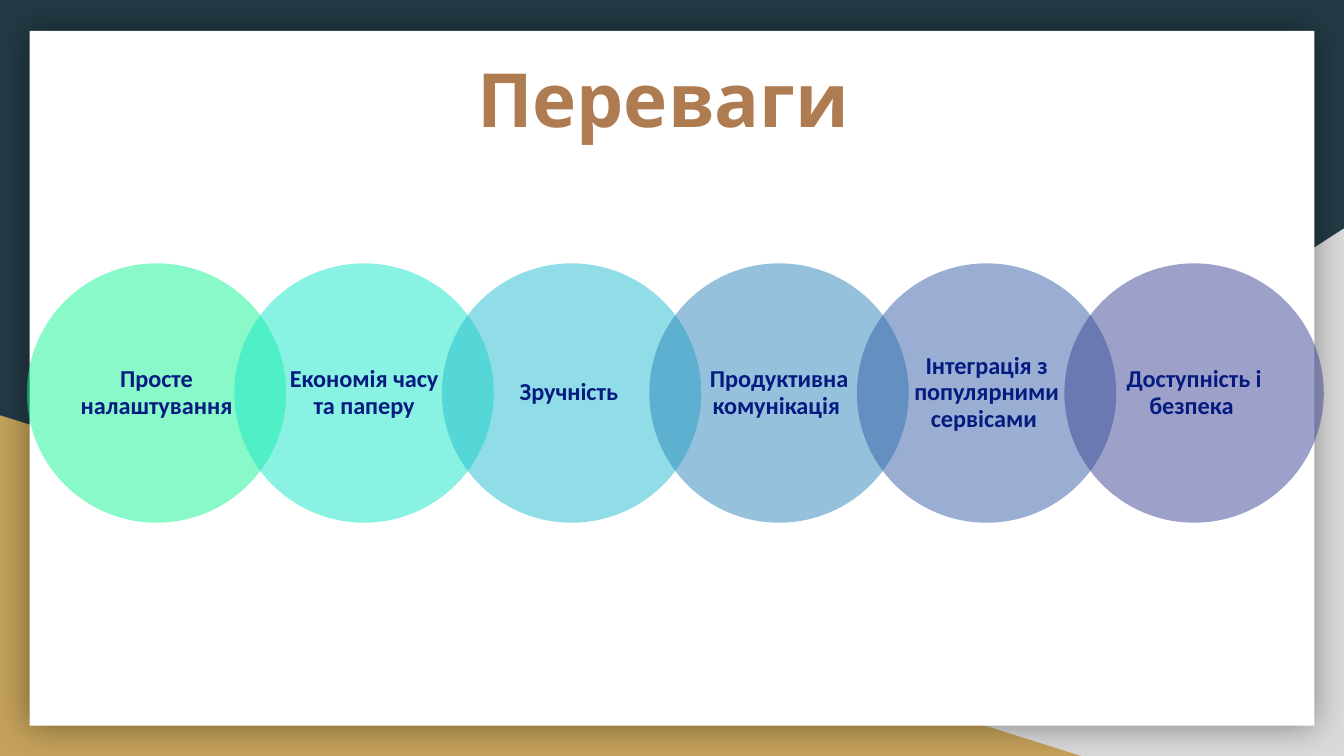
from lxml import etree
from pptx import Presentation
from pptx.dml.color import RGBColor
from pptx.enum.shapes import MSO_SHAPE
from pptx.enum.text import MSO_ANCHOR, PP_ALIGN
from pptx.oxml import parse_xml
from pptx.oxml.ns import nsdecls, qn
from pptx.util import Inches, Pt

RECT, OVAL, WEDGE = MSO_SHAPE.RECTANGLE, MSO_SHAPE.OVAL, MSO_SHAPE.RIGHT_TRIANGLE
TOP, MIDDLE = MSO_ANCHOR.TOP, MSO_ANCHOR.MIDDLE
CENTER = PP_ALIGN.CENTER

THEME = {
    "back": "233A44", "grey": "D9D9D9", "gold": "C4A15A", "card": "FFFFFF",
    "title": {"name": "League Spartan", "size": Pt(40), "bold": True, "color": "AF7B51"},
    "label": {"name": "Calibri", "size": Pt(13), "bold": True, "color": "051B80"},
}
ITEMS = [
    ("Просте налаштування ", "14F597"),
    ("Економія часу та паперу", "17E7C7"),
    ("Зручність ", "22BDD0"),
    ("Продуктивна комунікація ", "2C85BB"),
    ("Інтеграція з популярними сервісами ", "355EA7"),
    ("Доступність і безпека ", "3D4594"),
]


def add_plain(kind, box, color):
    """Add a filled shape with no line and no shadow."""
    shape = slide.shapes.add_shape(kind, *map(Inches, box))
    shape.shadow.inherit = False
    shape.fill.solid()
    shape.fill.fore_color.rgb = RGBColor.from_string(color)
    shape.line.fill.background()
    return shape


def set_text(shape, text, style, anchor, pads):
    frame = shape.text_frame
    form = {"word_wrap": True, "vertical_anchor": anchor}
    for side, pad in zip(("left", "top", "right", "bottom"), pads):
        form["margin_" + side] = Inches(pad)
    for key, value in form.items():
        setattr(frame, key, value)
    para = frame.paragraphs[0]
    para.alignment = CENTER
    run = para.add_run()
    run.text = text
    for key, value in style.items():
        if key == "color":
            run.font.color.rgb = RGBColor.from_string(value)
        else:
            setattr(run.font, key, value)
    return para


deck = Presentation()
deck.slide_width, deck.slide_height = Inches(10), Inches(10 * 9 / 16)
slide = deck.slides.add_slide(deck.slide_layouts[5])
slide.background.fill.solid()
slide.background.fill.fore_color.rgb = RGBColor.from_string(THEME["back"])

# Backdrop: two wedges and a white card with a soft shadow
wedge = add_plain(WEDGE, (3.92, 1.7, 6.08, 3.93), THEME["grey"])
wedge._element.spPr.find(qn("a:xfrm")).set("flipH", "1")
add_plain(WEDGE, (0, 3.09, 8.06, 2.54), THEME["gold"])
card = add_plain(RECT, (0.22, 0.23, 9.56, 5.17), THEME["card"])
card._element.spPr.find(qn("a:effectLst")).append(parse_xml(
    f'<a:outerShdw {nsdecls("a")} blurRad="{Pt(18)}" dist="0" dir="0" algn="ctr" rotWithShape="0">'
    '<a:srgbClr val="000000"><a:alpha val="40000"/></a:srgbClr></a:outerShdw>'))

# Title, lifted above the card
title = slide.shapes.title
place = {"left": 0.83, "top": 0.29, "width": 8.21, "height": 1.04}
for key, value in place.items():
    setattr(title, key, Inches(value))
set_text(title, "Переваги", THEME["title"], TOP, (0.1, 0.1, 0.1, 0.1))
card._element.addnext(title._element)

# Row of circles, each overlapping the one before by a fifth
left, top, size = 0.2, 1.96, 1.93
step = size * 0.8
for i, (text, color) in enumerate(ITEMS):
    disc = add_plain(OVAL, (left + i * step, top, size, size), color)
    tint = disc._element.spPr.find(qn("a:solidFill"))[0]
    etree.SubElement(tint, qn("a:alpha"), val="50000")
    para = set_text(disc, text, THEME["label"], MIDDLE, (0.11, 0.02, 0.11, 0.02))
    para.line_spacing = 0.9

deck.save("out.pptx")
